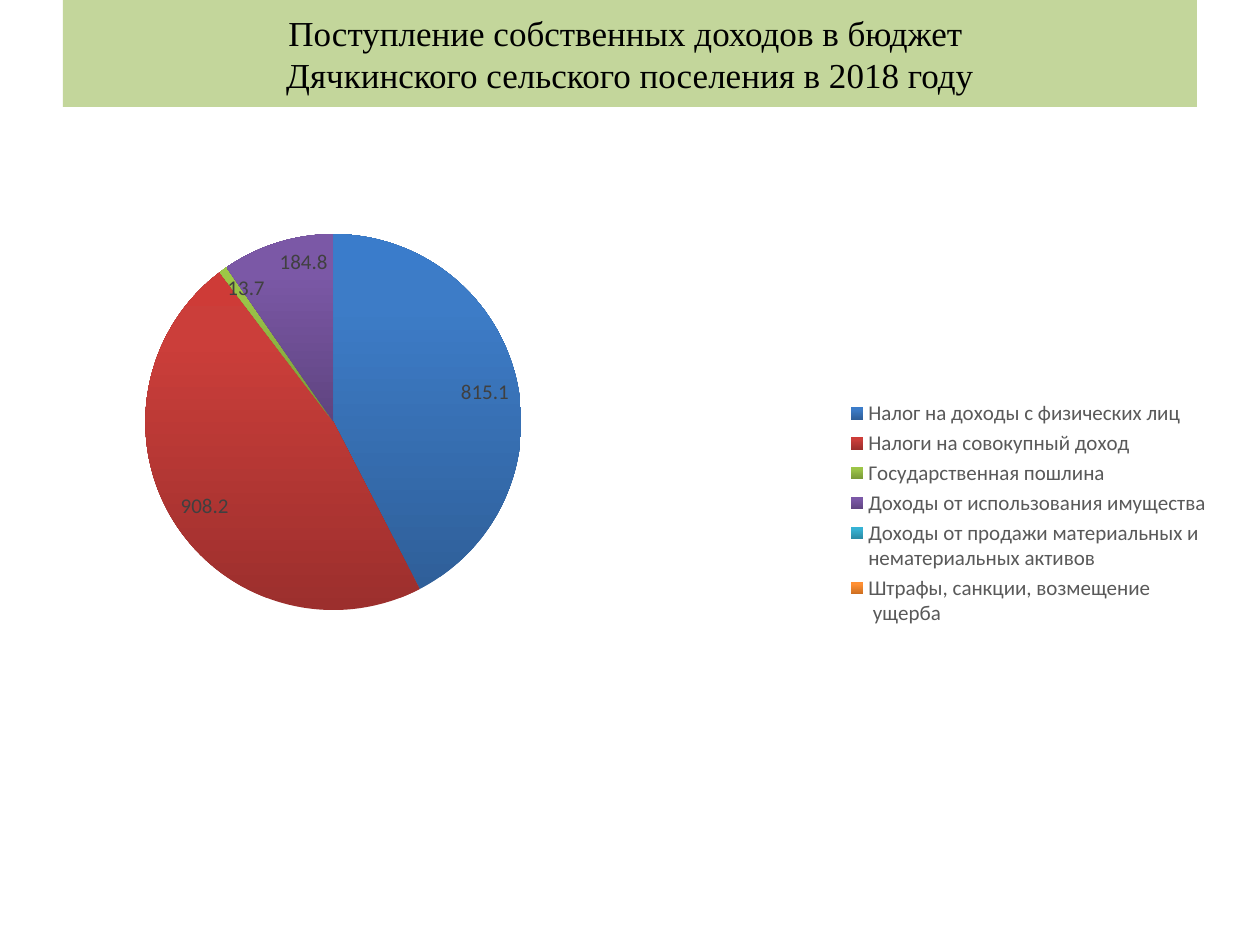
"""Build a slide with a pie chart of the settlement's own budget revenue in 2018."""
from copy import deepcopy
from dataclasses import dataclass

from pptx import Presentation
from pptx.chart.chart import Chart
from pptx.chart.data import CategoryChartData
from pptx.dml.color import RGBColor
from pptx.dml.fill import FillFormat
from pptx.enum.chart import XL_LABEL_POSITION as LabelPosition, XL_LEGEND_POSITION as LegendPosition
from pptx.enum.shapes import MSO_SHAPE as Preset
from pptx.enum.text import MSO_ANCHOR as Anchor, PP_ALIGN as Align
from pptx.oxml import parse_xml
from pptx.oxml.ns import nsdecls, qn
from pptx.slide import Slide
from pptx.util import Inches, Pt


@dataclass(frozen=True)
class Theme:
    banner: str = "C3D69B"
    title: str = "000000"
    legend: str = "595959"
    label: str = "404040"
    title_font: str = "Times New Roman"
    chart_font: str = "Calibri"
    title_size: int = 20
    chart_size: int = 12


@dataclass(frozen=True)
class Box:
    left: float
    top: float
    width: float
    height: float

    def place(self) -> tuple[int, int, int, int]:
        return (int(self.left * WIDTH), int(self.top * HEIGHT),
                int(self.width * WIDTH), int(self.height * HEIGHT))


@dataclass(frozen=True)
class Revenue:
    name: str
    amount: float | None
    dark: str
    middle: str
    light: str


THEME = Theme()
WIDTH, HEIGHT = Inches(10), Inches(7.5)
BANNER = Box(0.05, 0, 0.9, 0.113)
CHART = Box(0.05, 0.113, 0.921, 0.86)
PLOT = Box(0.071, 0.117, 0.324, 0.542)
TITLE = "Поступление собственных доходов в бюджет \vДячкинского сельского поселения в 2018 году"
REVENUES = [
    Revenue("Налог на доходы с физических лиц", 815.1, "2F5F99", "3D7CC7", "3A7CCB"),
    Revenue("Налоги на совокупный доход", 908.2, "9C2F2D", "CB3E3A", "CE3B37"),
    Revenue("Государственная пошлина", 13.7, "779737", "9BC348", "9DC746"),
    Revenue("Доходы от использования имущества", 184.8, "5F4480", "7B58A6", "7C57A8"),
    Revenue("Доходы от продажи материальных и \nнематериальных активов", None,
            "2A88A2", "37B1D2", "34B4D6"),
    Revenue("Штрафы, санкции, возмещение\n ущерба", None, "CC6E20", "FF9034", "FF9136"),
]


def style_font(font, name: str, size: int, color: str) -> None:
    font.name, font.size = name, Pt(size)
    font.color.rgb = RGBColor.from_string(color)


def add_banner(slide: Slide) -> None:
    shape = slide.shapes.add_shape(Preset.RECTANGLE, *BANNER.place())
    shape.shadow.inherit = False
    shape.fill.solid()
    shape.fill.fore_color.rgb = RGBColor.from_string(THEME.banner)
    shape.line.fill.background()
    frame = shape.text_frame
    frame.word_wrap = True
    frame.vertical_anchor = Anchor.MIDDLE
    paragraph = frame.paragraphs[0]
    paragraph.text = TITLE
    paragraph.alignment = Align.CENTER
    style_font(paragraph.font, THEME.title_font, THEME.title_size, THEME.title)


def fill_gradient(fill: FillFormat, revenue: Revenue) -> None:
    fill.gradient()
    fill.gradient_angle = 90
    stop_list = fill._xPr.find(qn("a:gradFill")).find(qn("a:gsLst"))
    stop_list.append(deepcopy(stop_list[-1]))
    colors = (revenue.dark, revenue.middle, revenue.light)
    for stop, position, color in zip(fill.gradient_stops, (0, 0.8, 1), colors):
        stop.position = position
        stop.color.rgb = RGBColor.from_string(color)


def set_plot_area(chart: Chart, box: Box) -> None:
    plot_area = chart._chartSpace.chart.plotArea
    for layout in plot_area.findall(qn("c:layout")):
        plot_area.remove(layout)
    shares = zip("xywh", (box.left, box.top, box.width, box.height))
    plot_area.insert(0, parse_xml(
        f'<c:layout {nsdecls("c")}><c:manualLayout><c:layoutTarget val="inner"/>'
        '<c:xMode val="edge"/><c:yMode val="edge"/>'
        + "".join(f'<c:{key} val="{share}"/>' for key, share in shares)
        + "</c:manualLayout></c:layout>"))


def add_revenue_chart(slide: Slide) -> None:
    data = CategoryChartData()
    data.categories = [revenue.name for revenue in REVENUES]
    data.add_series("Series 1", [revenue.amount for revenue in REVENUES])
    chart = slide.shapes.add_chart(Chart_Type.PIE, *CHART.place(), data).chart
    chart.has_title = False
    style_font(chart.font, THEME.chart_font, THEME.chart_size, THEME.title)
    set_plot_area(chart, PLOT)

    chart.has_legend = True
    chart.legend.position = LegendPosition.RIGHT
    chart.legend.include_in_layout = False
    style_font(chart.legend.font, THEME.chart_font, THEME.chart_size, THEME.legend)

    plot = chart.plots[0]
    plot.vary_by_categories = True
    series = plot.series[0]
    for index, revenue in enumerate(REVENUES):
        fill_gradient(series.points[index].format.fill, revenue)
    labels = series.data_labels
    labels.show_value = True
    labels.position = LabelPosition.INSIDE_END
    style_font(labels.font, THEME.chart_font, THEME.chart_size, THEME.label)


def main() -> None:
    presentation = Presentation()
    presentation.slide_width, presentation.slide_height = WIDTH, HEIGHT
    slide = presentation.slides.add_slide(presentation.slide_layouts[6])
    add_banner(slide)
    add_revenue_chart(slide)
    presentation.save("out.pptx")


from pptx.enum.chart import XL_CHART_TYPE as Chart_Type

if __name__ == "__main__":
    main()
